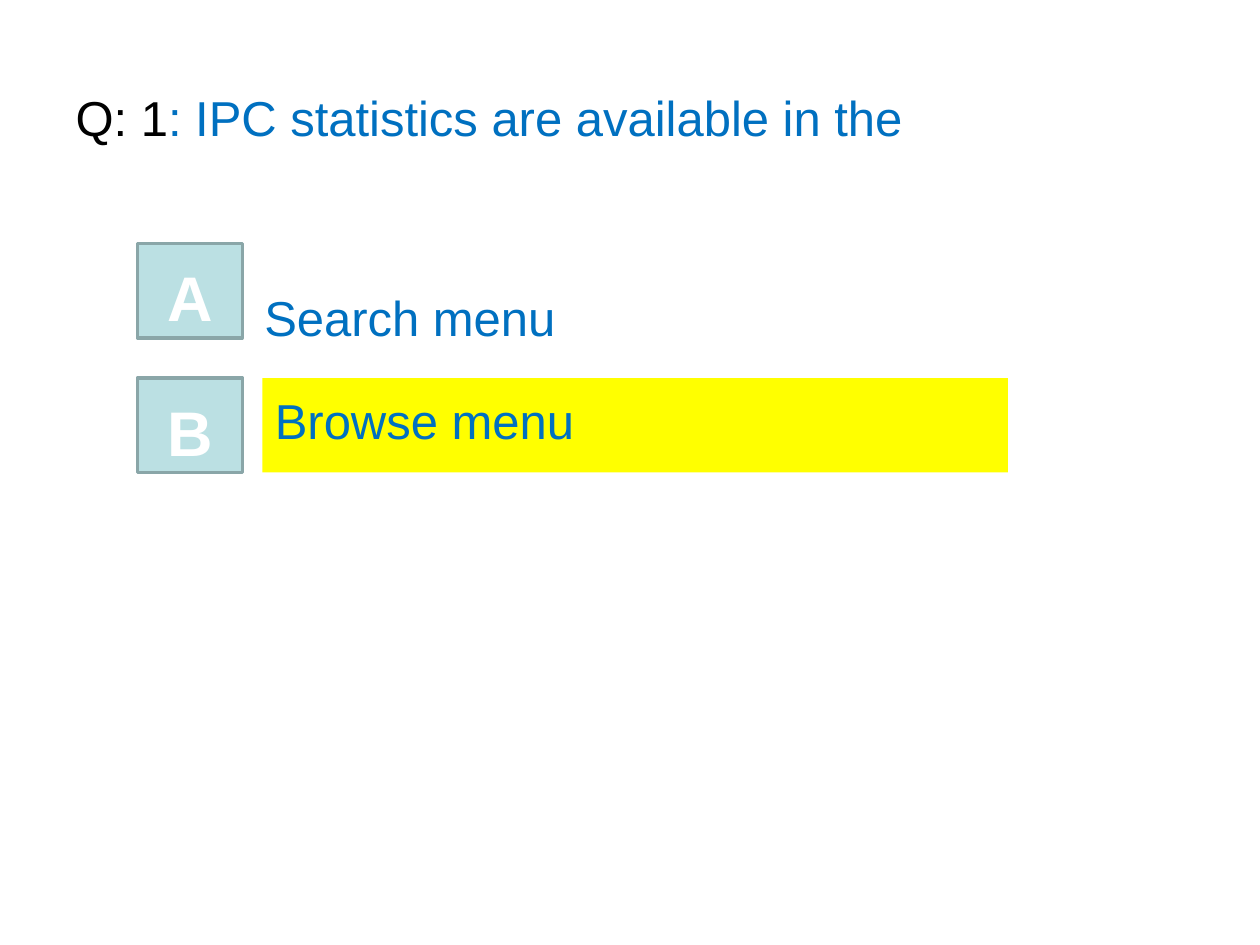
from pptx import Presentation
from pptx.dml.color import RGBColor
from pptx.enum.shapes import MSO_SHAPE as Shape
from pptx.enum.text import MSO_ANCHOR as Anchor, PP_ALIGN as Align
from pptx.util import Pt

BLUE = "0070C0"
BUTTON_LEFT, BUTTON_WIDTH, ROW_HEIGHT = 78.5, 60, 54


def color(value):
    return RGBColor.from_string(value)


def add_run(paragraph, text, size=28, fill=BLUE, bold=False):
    run = paragraph.add_run()
    run.text = text
    run.font.name = "Arial"
    run.font.size = Pt(size)
    run.font.bold = bold
    run.font.color.rgb = color(fill)


def write(shape, text, align=Align.LEFT, anchor=Anchor.TOP, top_inset=7, **font):
    frame = shape.text_frame
    frame.word_wrap = True
    frame.vertical_anchor = anchor
    frame.margin_top = Pt(top_inset)
    paragraph = frame.paragraphs[0]
    paragraph.alignment = align
    add_run(paragraph, text, **font)


def add_box(slide, kind, left, top, width, fill, line=None):
    shape = slide.shapes.add_shape(kind, Pt(left), Pt(top), Pt(width), Pt(ROW_HEIGHT))
    shape.shadow.inherit = False
    shape.fill.solid()
    shape.fill.fore_color.rgb = color(fill)
    if line:
        shape.line.color.rgb = color(line)
        shape.line.width = Pt(2)
    else:
        shape.line.fill.background()
    return shape


def add_title(slide, number, question):
    title = slide.shapes.title
    title.left, title.top, title.width, title.height = Pt(36), Pt(21.6), Pt(648), Pt(90)
    title.text_frame.vertical_anchor = Anchor.MIDDLE
    paragraph = title.text_frame.paragraphs[0]
    paragraph.alignment = Align.LEFT
    add_run(paragraph, number, fill="000000")
    add_run(paragraph, question)


def add_button(slide, letter, top):
    button = add_box(slide, Shape.ACTION_BUTTON_CUSTOM, BUTTON_LEFT, top,
                     BUTTON_WIDTH, "BBE0E3", line="8AA6A8")
    write(button, letter, align=Align.CENTER, anchor=Anchor.MIDDLE,
          top_inset=10, size=36, fill="FFFFFF", bold=True)


def main():
    presentation = Presentation()
    presentation.slide_width, presentation.slide_height = Pt(720), Pt(540)
    slide = presentation.slides.add_slide(presentation.slide_layouts[5])

    # Question
    add_title(slide, "Q: 1", ": IPC statistics are available in the")

    # First answer
    answer = slide.shapes.add_textbox(Pt(144), Pt(157), Pt(432), Pt(39.6))
    write(answer, "Search menu")

    # Answer letters
    for row, letter in enumerate("AB"):
        add_button(slide, letter, 139 + row * 77)

    # Highlighted answer
    highlight = add_box(slide, Shape.RECTANGLE, 150, 216, 426, "FFFF00")
    write(highlight, "Browse menu")

    presentation.save("out.pptx")


if __name__ == "__main__":
    main()
